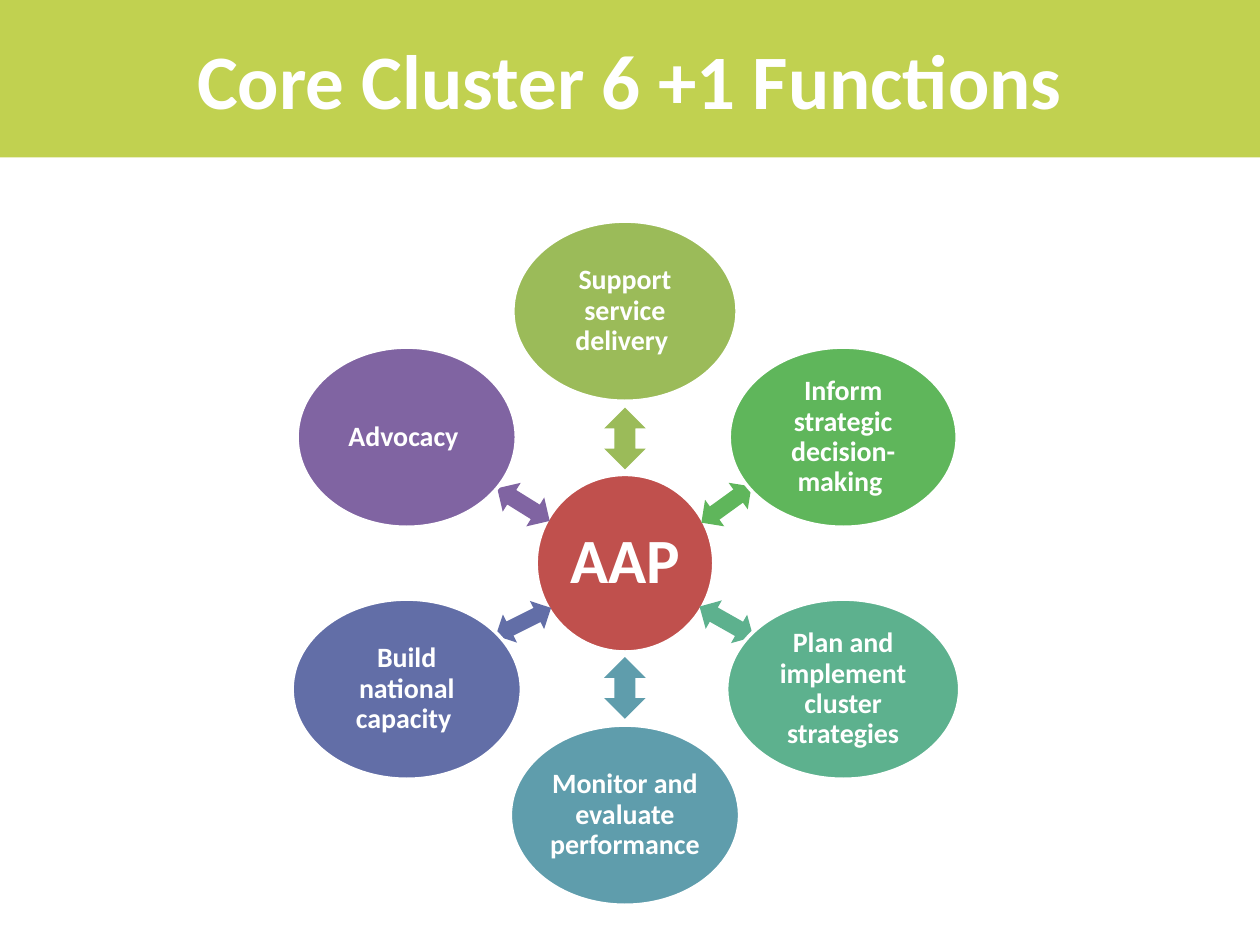
from math import cos, radians, sin

from pptx import Presentation
from pptx.dml.color import RGBColor
from pptx.enum.shapes import MSO_SHAPE
from pptx.enum.text import MSO_ANCHOR, PP_ALIGN
from pptx.util import Inches, Pt

RECTANGLE = MSO_SHAPE.RECTANGLE
OVAL = MSO_SHAPE.OVAL
DOUBLE_ARROW = MSO_SHAPE.UP_DOWN_ARROW
MIDDLE = MSO_ANCHOR.MIDDLE
CENTER = PP_ALIGN.CENTER

COLORS = {
    "white": "FFFFFF", "banner": "C1D150", "hub": "C0504D",
    "support": "9BBB59", "inform": "5FB65B", "plan": "5DB18E",
    "monitor": "5F9DAC", "build": "626EA7", "advocacy": "8064A2",
}


def add_filled_shape(kind, center_x, center_y, width, height, color, outlined=False):
    shape = slide.shapes.add_shape(
        kind, Inches(center_x - width / 2), Inches(center_y - height / 2),
        Inches(width), Inches(height))
    shape.shadow.inherit = False
    shape.fill.solid()
    shape.fill.fore_color.rgb = RGBColor.from_string(COLORS[color])
    if outlined:
        shape.line.color.rgb = RGBColor.from_string(COLORS["white"])
        shape.line.width = Pt(2)
    else:
        shape.line.fill.background()
    return shape


def write_text(shape, text, size, inset, line_spacing):
    frame = shape.text_frame
    frame_format = {"word_wrap": True, "vertical_anchor": MIDDLE}
    for side in ("left", "top", "right", "bottom"):
        frame_format[f"margin_{side}"] = Inches(inset)
    for name, value in frame_format.items():
        setattr(frame, name, value)
    paragraph = frame.paragraphs[0]
    paragraph.alignment = CENTER
    paragraph.line_spacing = line_spacing
    run = paragraph.add_run()
    run.text = text
    for name, value in {"name": "Calibri", "size": Pt(size), "bold": True}.items():
        setattr(run.font, name, value)
    run.font.color.rgb = RGBColor.from_string(COLORS["white"])


presentation = Presentation()
presentation.slide_width = Inches(10)
presentation.slide_height = Inches(7.5)
slide = presentation.slides.add_slide(presentation.slide_layouts[6])

# Title banner
banner = add_filled_shape(RECTANGLE, 5, 0.625, 10, 1.25, "banner")
write_text(banner, "Core Cluster 6 +1 Functions", 44, 0.05, 1.0)

# Hub
HUB_X, HUB_Y = 4.96, 4.47
hub = add_filled_shape(OVAL, HUB_X, HUB_Y, 1.41, 1.41, "hub", outlined=True)
write_text(hub, "AAP", 36, 0.05, 0.9)

# Functions around the hub, clockwise from the top:
# text, color, oval width, arrow width, arrow distance, arrow rotation
ORBIT = 2.0
functions = [
    ("Support service delivery ", "support", 1.78, 0.33, 0.99, 0),
    ("Inform strategic decision-making ", "inform", 1.81, 0.26, 0.93, 54.1),
    ("Plan and implement cluster strategies", "plan", 1.85, 0.26, 0.93, 119.5),
    ("Monitor and evaluate performance", "monitor", 1.82, 0.33, 0.99, 0),
    ("Build national capacity ", "build", 1.82, 0.25, 0.93, 63.3),
    ("Advocacy ", "advocacy", 1.74, 0.27, 0.93, 121.9),
]
for index, (text, color, oval_width, arrow_width, distance, rotation) in enumerate(functions):
    angle = radians(index * 360 / len(functions))
    step_x, step_y = sin(angle), -cos(angle)
    arrow = add_filled_shape(
        DOUBLE_ARROW, HUB_X + distance * step_x, HUB_Y + distance * step_y,
        arrow_width, 0.49, color)
    arrow.rotation = rotation
    oval = add_filled_shape(
        OVAL, HUB_X + ORBIT * step_x, HUB_Y + ORBIT * step_y,
        oval_width, 1.43, color, outlined=True)
    write_text(oval, text, 16, 0.02, 0.9)

presentation.save("out.pptx")
